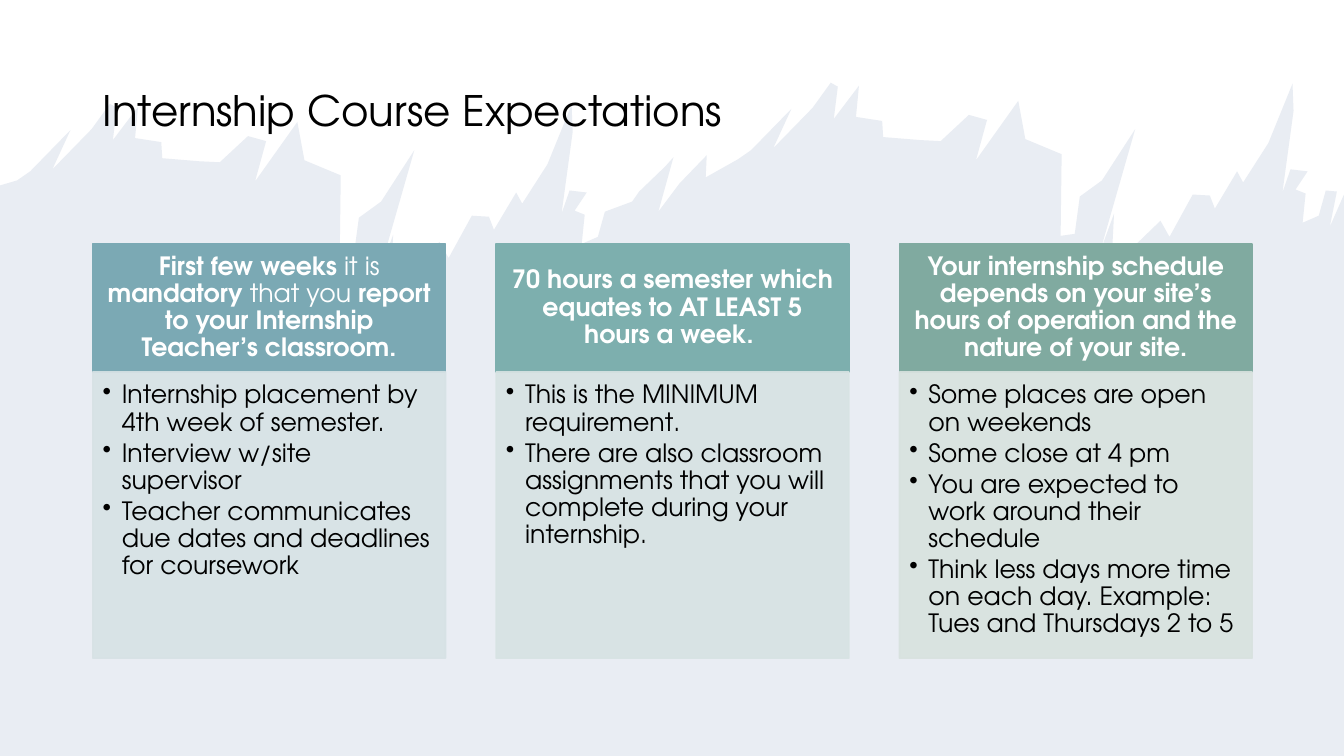
"""Build the internship course expectations slide."""
from lxml import etree
from pptx import Presentation
from pptx.dml.color import RGBColor
from pptx.enum import shapes, text
from pptx.oxml import ns
from pptx.util import Inches, Pt

FONT = "TeX Gyre Adventor"
BLACK = RGBColor(0x00, 0x00, 0x00)
WHITE = RGBColor(0xFF, 0xFF, 0xFF)
RIDGE_BLUE = RGBColor(0x91, 0xA5, 0xC3)

TITLE = "Internship Course Expectations"
COLUMNS = [
    {
        "head": [("First few weeks ", True), ("it is ", False), ("mandatory", True),
                 (" that you ", False),
                 ("report to your Internship Teacher’s classroom.", True)],
        "items": ["Internship placement by 4th week of semester.",
                  "Interview w/site supervisor",
                  "Teacher communicates due dates and deadlines for coursework"],
        "strong": RGBColor(0x7B, 0xA9, 0xB4), "pale": RGBColor(0xD7, 0xE2, 0xE5),
    },
    {
        "head": [("70 hours a semester which equates to AT LEAST 5 hours a week. ", True)],
        "items": ["This is the MINIMUM requirement.",
                  "There are also classroom assignments that you will complete "
                  "during your internship."],
        "strong": RGBColor(0x7D, 0xAF, 0xAE), "pale": RGBColor(0xD7, 0xE3, 0xE3),
    },
    {
        "head": [("Your internship schedule depends on your site’s hours of operation "
                  "and the nature of your site.", True)],
        "items": ["Some places are open on weekends",
                  "Some close at 4 pm",
                  "You are expected to work around their schedule",
                  "Think less days more time on each day. Example: "
                  "Tues and Thursdays 2 to 5"],
        "strong": RGBColor(0x80, 0xAA, 0xA0), "pale": RGBColor(0xD8, 0xE2, 0xDF),
    },
]

LEFT, SPAN = 0.92, 11.5
COLUMN_WIDTH = 3.5
HEAD_TOP, HEAD_HEIGHT, BODY_HEIGHT = 2.42, 1.27, 2.84
PAGE_WIDTH, PAGE_HEIGHT = 13.33, 7.5

REPEAT_LEFT, REPEAT_DOWN = 7.15, 0.21
RIDGE = [
    (7.32, 1.58), (7.45, 1.49), (7.85, 1.08), (7.67, 1.47), (8.06, 1.07), (8.24, 0.82),
    (8.31, 0.86), (8.27, 1.18), (8.52, 0.85), (8.49, 1.16), (8.75, 1.2), (8.76, 1.36),
    (9.13, 1.39), (9.33, 1.4), (9.61, 1.14), (9.79, 1.19), (9.68, 1.59), (10.1, 1),
    (10.17, 1.38), (10.53, 1.53), (10.52, 2.34), (10.66, 2.32), (10.71, 1.95),
    (10.93, 1.79), (11.26, 1.28), (10.91, 2.5), (11.05, 2.12), (11.03, 2.5),
    (11.2, 2.49), (11.51, 2.19), (11.6, 2.35), (11.83, 1.93), (12, 1.94), (12.05, 2.07),
    (12.27, 1.7), (12.33, 1.81), (12.58, 1.42), (12.82, 0.83), (12.83, 1.1),
    (12.72, 1.91), (12.8, 1.68), (12.97, 1.7), (12.85, 1.88), (12.95, 1.92),
    (12.92, 2.21), (13.08, 2.14), (13.15, 1.89),
]
RIDGE_START = [(0, 1.84), (0.17, 1.79)]
RIDGE_LINK = [(6.27, 2), (6.34, 1.9), (6.6, 1.65), (6.68, 1.56), (6.53, 2.1),
              (6.74, 1.82), (7.01, 1.54), (7, 1.76)]
RIDGE_END = [(13.26, 1.9), (13.19, 2.25), (PAGE_WIDTH, 1.93),
             (PAGE_WIDTH, PAGE_HEIGHT), (0, PAGE_HEIGHT)]


def set_opacity(shape, percent):
    """Make every solid colour of a shape translucent."""
    for colour in shape.element.spPr.iter(ns.qn("a:srgbClr")):
        etree.SubElement(colour, ns.qn("a:alpha"), val=str(percent * 1000))


def add_ridge(page):
    """Draw the torn backdrop behind everything else."""
    repeat = [(x - REPEAT_LEFT, y + REPEAT_DOWN) for x, y in RIDGE]
    outline = RIDGE_START + repeat + RIDGE_LINK + RIDGE + RIDGE_END
    corners = [(Inches(x), Inches(y)) for x, y in outline]
    builder = page.shapes.build_freeform(*corners[0])
    builder.add_line_segments(corners[1:])
    ridge = builder.convert_to_shape()
    ridge.shadow.inherit = False
    ridge.fill.solid()
    ridge.fill.fore_color.rgb = RIDGE_BLUE
    ridge.line.fill.background()
    set_opacity(ridge, 20)


def add_panel(page, left, top, height, colour, insets, anchor):
    """Add one coloured rectangle and return it."""
    panel = page.shapes.add_shape(shapes.MSO_SHAPE.RECTANGLE, Inches(left), Inches(top),
                                  Inches(COLUMN_WIDTH), Inches(height))
    panel.shadow.inherit = False
    panel.fill.solid()
    panel.fill.fore_color.rgb = colour
    panel.line.color.rgb = colour
    panel.line.width = Pt(1)
    frame = panel.text_frame
    frame.word_wrap = True
    frame.vertical_anchor = anchor
    (frame.margin_left, frame.margin_top,
     frame.margin_right, frame.margin_bottom) = map(Inches, insets)
    return panel


def style(para, size, colour, align):
    """Format a whole paragraph."""
    para.alignment = align
    para.line_spacing = 0.9
    para.font.name = FONT
    para.font.size = Pt(size)
    para.font.color.rgb = colour


def add_column(page, left, column):
    """Add a heading panel with its bulleted panel below."""
    head = add_panel(page, left, HEAD_TOP, HEAD_HEIGHT, column["strong"],
                     (0.14, 0.08, 0.14, 0.08), text.MSO_ANCHOR.MIDDLE)
    para = head.text_frame.paragraphs[0]
    style(para, 18, WHITE, text.PP_ALIGN.CENTER)
    for words, bold in column["head"]:
        span = para.add_run()
        span.text = words
        span.font.bold = bold

    body = add_panel(page, left, HEAD_TOP + HEAD_HEIGHT, BODY_HEIGHT, column["pale"],
                     (0.1, 0.1, 0.14, 0.16), text.MSO_ANCHOR.TOP)
    set_opacity(body, 90)
    body.text_frame.text = "\n".join(column["items"])
    for para in body.text_frame.paragraphs:
        props = para._p.get_or_add_pPr()
        props.set("marL", str(Inches(0.19)))
        props.set("indent", str(Inches(-0.19)))
        etree.SubElement(props, ns.qn("a:buChar"), char="•")
        style(para, 18, BLACK, text.PP_ALIGN.LEFT)
        para.space_after = Pt(2.7)


def main():
    """Compose and save the slide."""
    deck = Presentation()
    deck.slide_width, deck.slide_height = Inches(PAGE_WIDTH), Inches(PAGE_HEIGHT)
    page = deck.slides.add_slide(deck.slide_layouts[5])
    add_ridge(page)

    title = page.shapes.title
    page.shapes.element.append(title.element)
    title.left, title.top = Inches(LEFT), Inches(0.4)
    title.width, title.height = Inches(SPAN), Inches(1.45)
    title.text_frame.text = TITLE
    title.text_frame.vertical_anchor = text.MSO_ANCHOR.MIDDLE
    style(title.text_frame.paragraphs[0], 30, BLACK, text.PP_ALIGN.LEFT)

    pitch = (SPAN - COLUMN_WIDTH) / (len(COLUMNS) - 1)
    for index, column in enumerate(COLUMNS):
        add_column(page, LEFT + index * pitch, column)
    deck.save("out.pptx")


if __name__ == "__main__":
    main()
